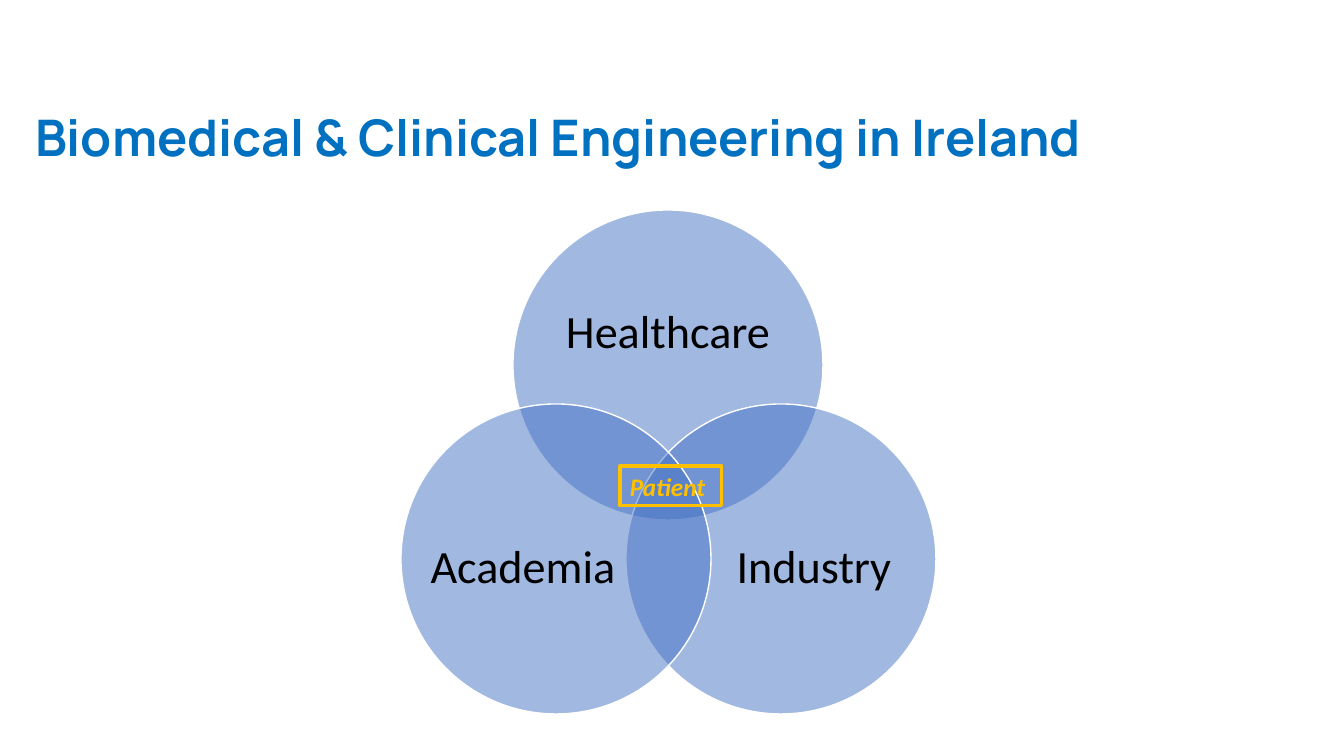
from lxml import etree
from pptx import Presentation
from pptx.dml.color import RGBColor
from pptx.enum.shapes import MSO_SHAPE
from pptx.enum.text import MSO_ANCHOR, MSO_AUTO_SIZE, PP_ALIGN
from pptx.oxml.ns import qn
from pptx.util import Pt

PX = 914400 / 100.8
TITLE_BLUE = RGBColor(0x00, 0x70, 0xC0)
CIRCLE_BLUE = RGBColor(0x44, 0x72, 0xC4)
WHITE = RGBColor(0xFF, 0xFF, 0xFF)
BLACK = RGBColor(0x00, 0x00, 0x00)
GOLD = RGBColor(0xFF, 0xC0, 0x00)

OVAL, RECT = MSO_SHAPE.OVAL, MSO_SHAPE.RECTANGLE
TOP, MIDDLE = MSO_ANCHOR.TOP, MSO_ANCHOR.MIDDLE
LEFT, CENTER = PP_ALIGN.LEFT, PP_ALIGN.CENTER

TITLE_FONT = dict(name="Manrope", size=Pt(36), bold=True)
LABEL_FONT = dict(name="Calibri", size=Pt(33))
PATIENT_FONT = dict(name="Calibri", size=Pt(18), bold=True, italic=True)

DIAMETER = 310
# label, circle left and top, label box
CIRCLES = [
    ("Healthcare", (513, 210), (554, 264, 228, 139)),
    ("Industry", (626, 404), (721, 484, 186, 170)),
    ("Academia", (401, 404), (430, 484, 186, 170)),
]


def emu(*lengths):
    return [round(n * PX) for n in lengths]


def write(shape, text, font, color, align, anchor, spacing=0.9):
    tf = shape.text_frame
    tf.word_wrap = True
    tf.auto_size = MSO_AUTO_SIZE.NONE
    tf.vertical_anchor = anchor
    p = tf.paragraphs[0]
    p.alignment = align
    p.line_spacing = spacing
    r = p.add_run()
    r.text = text
    for key, value in font.items():
        setattr(r.font, key, value)
    r.font.color.rgb = color


def add_title(s, text):
    title = s.shapes.title
    title.left, title.top, title.width, title.height = emu(25, 108, 1115, 101)
    write(title, text, TITLE_FONT, TITLE_BLUE, LEFT, TOP)


def add_outlined(s, kind, box, color, width):
    sp = s.shapes.add_shape(kind, *emu(*box))
    sp.shadow.inherit = False
    sp.line.color.rgb = color
    sp.line.width = Pt(width)
    return sp


def add_circle(s, left, top):
    """Add a half-transparent circle with a white edge."""
    sp = add_outlined(s, OVAL, (left, top, DIAMETER, DIAMETER), WHITE, 1)
    sp.fill.solid()
    sp.fill.fore_color.rgb = CIRCLE_BLUE
    color = sp.fill._xPr.find(qn("a:solidFill"))[0]
    etree.SubElement(color, qn("a:alpha")).set("val", "50000")


def add_label(s, text, box):
    sp = s.shapes.add_textbox(*emu(*box))
    tf = sp.text_frame
    for side in ("left", "top", "right", "bottom"):
        setattr(tf, f"margin_{side}", 0)
    write(sp, text, LABEL_FONT, BLACK, CENTER, MIDDLE)


def add_patient_box(s):
    sp = add_outlined(s, RECT, (620, 466, 102, 40), GOLD, 2.25)
    sp.fill.background()
    write(sp, "Patient", PATIENT_FONT, GOLD, LEFT, TOP, spacing=1.0)


def main():
    prs = Presentation()
    prs.slide_width, prs.slide_height = emu(1344, 756)
    s = prs.slides.add_slide(prs.slide_layouts[5])
    add_title(s, "Biomedical & Clinical Engineering in Ireland")
    for text, corner, box in CIRCLES:
        add_circle(s, *corner)
        add_label(s, text, box)
    add_patient_box(s)
    prs.save("out.pptx")


if __name__ == "__main__":
    main()
